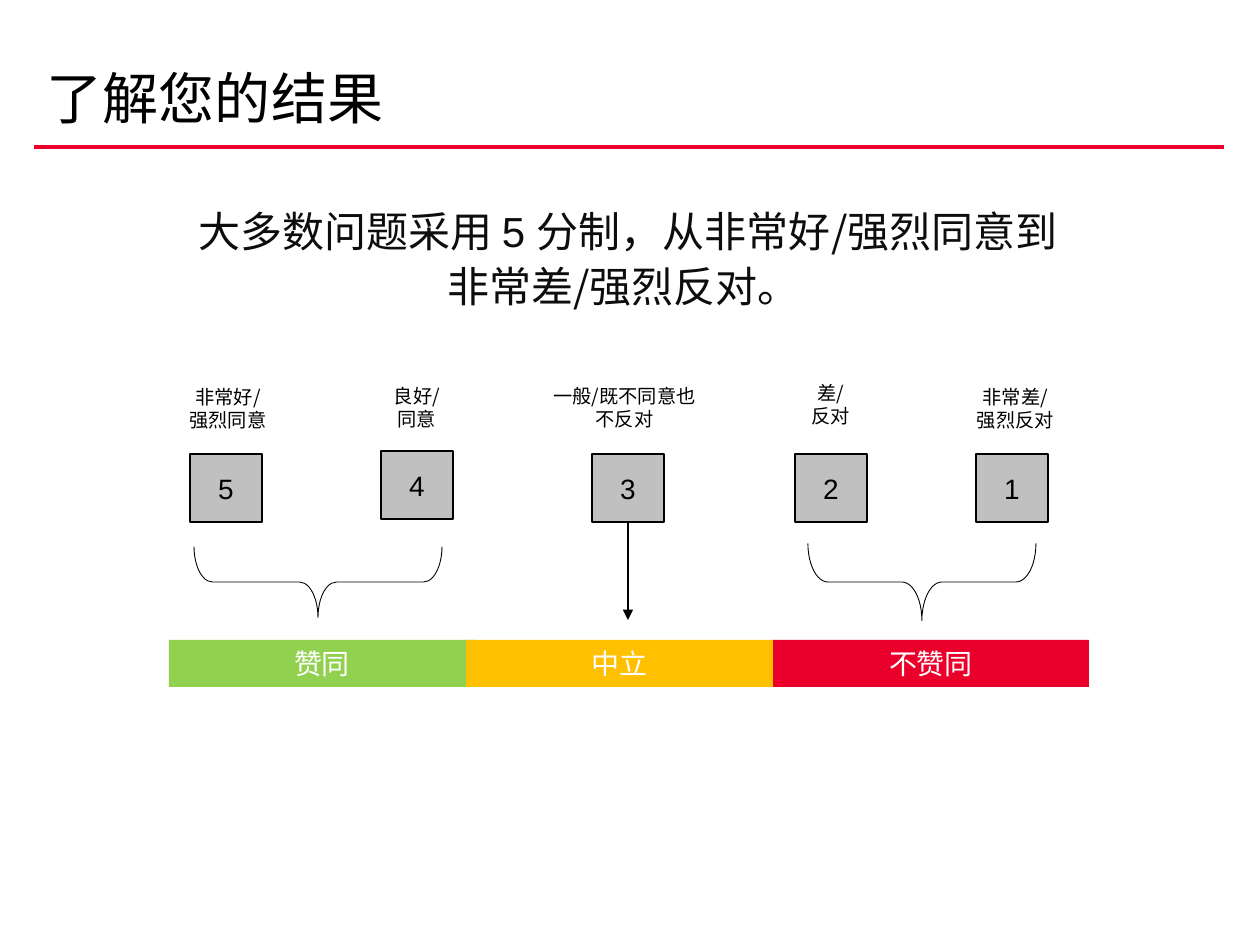
from pptx import Presentation
from pptx.dml.color import RGBColor
from pptx.enum.shapes import MSO_CONNECTOR as Link, MSO_SHAPE as Shape
from pptx.enum.text import MSO_ANCHOR as Anchor, PP_ALIGN as Align
from pptx.oxml.ns import qn
from pptx.util import Emu, Pt
from lxml.etree import SubElement

SCALE = 914400 // 126
CJK, LATIN = "Noto Sans CJK SC", "Arial"
BLACK, WHITE, RED = "000000", "FFFFFF", "EA002A"

# Score, box left, box top, label left, label top, label width, label lines
SCORES = [
    ("5", 190, 454, 145, 379, 166, ["非常好/", "强烈同意"]),
    ("4", 381, 451, 349, 378, 136, ["良好/", "同意"]),
    ("3", 592, 454, 511, 378, 227, ["一般/既不同意也", "不反对"]),
    ("2", 795, 454, 761, 375, 140, ["差/", "反对"]),
    ("1", 976, 454, 917, 379, 197, ["非常差/", "强烈反对"]),
]
# Name, left, width, fill; the neutral bar overlaps the first one
BARS = [
    ("赞同", 169, 306, "92D050"),
    ("不赞同", 773, 316, RED),
    ("中立", 466, 307, "FFC000"),
]
# Centre x, centre y, span, depth
BRACES = [(318, 582, 248, 71), (922, 582, 228, 77)]


def px(*vals):
    return [Emu(round(v * SCALE)) for v in vals]


def color(code):
    return RGBColor.from_string(code)


def apply(item, values):
    for key, val in values.items():
        setattr(item, key, val)


def write(shape, lines, size, tint=BLACK, font=CJK, align=Align.CENTER,
          anchor=Anchor.TOP, wrap=True, pad=(12, 6), gap=1.0):
    """Each line is a string or a list of (text, font) runs."""
    frame = shape.text_frame
    side, end = px(*pad)
    apply(frame, {"word_wrap": wrap, "vertical_anchor": anchor,
                  "margin_left": side, "margin_right": side,
                  "margin_top": end, "margin_bottom": end})
    for i, line in enumerate(lines):
        para = frame.add_paragraph() if i else frame.paragraphs[0]
        apply(para, {"alignment": align, "line_spacing": gap})
        for text, face in [(line, font)] if isinstance(line, str) else line:
            run = para.add_run()
            run.text = text
            apply(run.font, {"size": Pt(size), "name": face})
            run.font.color.rgb = color(tint)
            SubElement(run.font._element, qn("a:ea"), typeface=CJK)


def add_text(slide, box, lines, size, **style):
    write(slide.shapes.add_textbox(*px(*box)), lines, size, **style)


def add_shape(slide, kind, box, fill=None, line=None, width=1):
    shape = slide.shapes.add_shape(kind, *px(*box))
    shape.shadow.inherit = False
    for part, code in ((shape.fill, fill), (shape.line.fill, line)):
        if code:
            part.solid()
            part.fore_color.rgb = color(code)
        else:
            part.background()
    if line:
        shape.line.width = Pt(width)
    return shape


def add_line(slide, ends, tint, width, arrow=False):
    line = slide.shapes.add_connector(Link.STRAIGHT, *px(*ends))
    line.line.color.rgb = color(tint)
    line.line.width = Pt(width)
    if arrow:
        SubElement(line.line._get_or_add_ln(), qn("a:tailEnd"), type="triangle")
    SubElement(line._element.spPr, qn("a:effectLst"))
    return line


def add_brace(slide, x, y, span, depth):
    box = (x - depth / 2, y - span / 2, depth, span)
    brace = add_shape(slide, Shape.LEFT_BRACE, box, line=BLACK, width=0.5)
    brace.rotation = 270
    brace.adjustments[0] = 0.26
    brace.adjustments[1] = 0.5


def add_score(slide, score, left, top, x, y, width, label):
    box = add_shape(slide, Shape.RECTANGLE, (left, top, 72, 68), "C0C0C0", BLACK)
    write(box, [score], 16, font=LATIN, anchor=Anchor.MIDDLE, wrap=False)
    add_text(slide, (x, y, width, 59), label, 11)
    return box


def main():
    prs = Presentation()
    prs.slide_width, prs.slide_height = px(1260, 945)
    slide = prs.slides.add_slide(prs.slide_layouts[6])

    # Title and rule
    add_line(slide, (34, 147, 1224, 147), RED, 2)
    add_text(slide, (35, 6, 1134, 130), ["了解您的结果"], 32,
             align=Align.LEFT, anchor=Anchor.BOTTOM, gap=0.8)

    # Introduction
    intro = [
        [("大多数问题采用", CJK), (" 5 ", LATIN), ("分制，从非常好/强烈同意到", CJK)],
        [("非常差/强烈反对", CJK), ("。 ", LATIN)],
    ]
    add_text(slide, (73, 193, 1110, 106), intro, 24, tint="0D0D0D",
             pad=(14, 7), gap=1.1)

    # Scores with labels
    boxes = {row[0]: add_score(slide, *row) for row in SCORES}

    # Links from scores to groups
    arrow = add_line(slide, (628, 522, 628, 620), BLACK, 1, arrow=True)
    arrow.begin_connect(boxes["3"], 2)
    for brace in BRACES:
        add_brace(slide, *brace)

    # Group bars
    for name, left, width, fill in BARS:
        bar = add_shape(slide, Shape.RECTANGLE, (left, 640, width, 47), fill)
        write(bar, [name], 16, tint=WHITE, anchor=Anchor.MIDDLE)

    prs.save("out.pptx")


if __name__ == "__main__":
    main()
